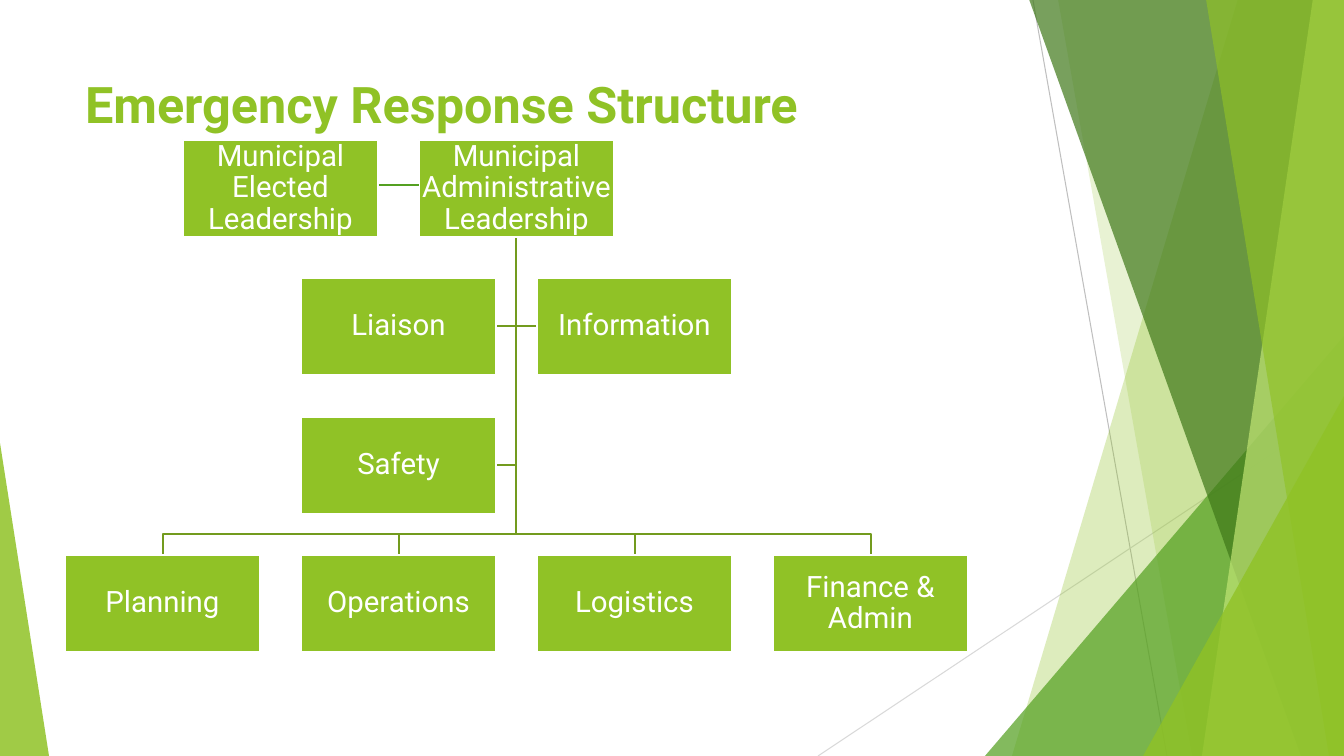
from lxml import etree
from pptx import Presentation
from pptx import util as u
from pptx.dml.color import RGBColor
from pptx.enum import shapes, text
from pptx.oxml.ns import qn

LIME = RGBColor(0x90, 0xC2, 0x26)
GREEN = RGBColor(0x54, 0xA0, 0x21)
FOREST = RGBColor(0x3F, 0x78, 0x19)
PALE = RGBColor(0xC0, 0xE4, 0x74)
OLIVE = RGBColor(0x73, 0x9B, 0x1E)
GRAY = RGBColor(0xBF, 0xBF, 0xBF)
SILVER = RGBColor(0xD9, 0xD9, 0xD9)
WHITE = RGBColor(0xFF, 0xFF, 0xFF)

FONT = "Roboto"
WIDTH, HEIGHT = 1344, 756
PX = u.Inches(7.5) / HEIGHT

TITLE = "Emergency Response Structure"
THIN_LINES = [((1033, 0), (1167, 756), GRAY), ((1344, 406), (818, 756), SILVER)]
FACETS = [
    ([(1238, -1), (1344, -1), (1344, 756), (1012, 756)], LIME, 30),
    ([(1058, -1), (1344, -1), (1344, 756), (1192, 756)], LIME, 20),
    ([(1344, 336), (1344, 756), (985, 756)], GREEN, 72),
    ([(1029, -1), (1344, -1), (1344, 756), (1301, 756)], FOREST, 70),
    ([(1313, -1), (1344, -1), (1344, 756), (1202, 756)], PALE, 70),
    ([(1206, -1), (1344, -1), (1344, 756), (1329, 756)], LIME, 65),
    ([(1344, 396), (1344, 756), (1143, 756)], LIME, 80),
    ([(0, 443), (49, 756), (0, 756)], LIME, 85),
]
LEADERS = [("Municipal Elected Leadership", 1, 0), ("Municipal Administrative Leadership", 3, 0)]
SECTIONS = [("Planning", 0, 3), ("Operations", 2, 3), ("Logistics", 4, 3), ("Finance & Admin", 6, 3)]
STAFF = [("Liaison", 2, 1), ("Information", 4, 1), ("Safety", 2, 2)]

CHART_LEFT, CHART_TOP = 65, 140
HALF_COLUMN, ROW_PITCH = 118, 138.5
BOX_WIDTH, BOX_HEIGHT = 195, 97
TRUNK, TRUNK_TOP, BUS = 516, 237, 534


def px(value):
    return u.Emu(round(value * PX))


def corner(column, row):
    return CHART_LEFT + HALF_COLUMN * column, int(CHART_TOP + ROW_PITCH * row)


def add_outline(page, points, close):
    builder = page.shapes.build_freeform(*points[0], scale=PX)
    builder.add_line_segments(points[1:], close=close)
    outline = builder.convert_to_shape()
    outline.shadow.inherit = False
    return outline


def add_facet(page, points, color, opacity):
    facet = add_outline(page, points, True)
    facet.fill.solid()
    facet.fill.fore_color.rgb = color
    facet.line.fill.background()
    swatch = facet.fill._xPr.find(qn("a:solidFill"))[0]
    etree.SubElement(swatch, qn("a:alpha"), val=str(opacity * 1000))


def add_branch(page, points):
    branch = add_outline(page, [(TRUNK, TRUNK_TOP), *points], False)
    branch.fill.background()
    branch.line.color.rgb = OLIVE
    branch.line.width = u.Pt(1.5)


def add_line(page, start, end, color, width):
    line = page.shapes.add_connector(
        shapes.MSO_CONNECTOR.STRAIGHT, *map(px, start), *map(px, end))
    line.line.color.rgb = color
    line.line.width = u.Pt(width)
    etree.SubElement(line._element.spPr, qn("a:effectLst"))


def write(para, words, size, color):
    span = para.add_run()
    span.text = words
    span.font.name = FONT
    span.font.size = u.Pt(size)
    span.font.color.rgb = color
    return span


def add_box(page, label, column, row):
    left, top = corner(column, row)
    box = page.shapes.add_shape(
        shapes.MSO_SHAPE.RECTANGLE, px(left), px(top), px(BOX_WIDTH), px(BOX_HEIGHT))
    box.shadow.inherit = False
    box.fill.solid()
    box.fill.fore_color.rgb = LIME
    box.line.color.rgb = WHITE
    box.line.width = u.Pt(1.5)
    frame = box.text_frame
    frame.word_wrap = True
    frame.vertical_anchor = text.MSO_ANCHOR.MIDDLE
    frame.margin_left = frame.margin_right = frame.margin_top = frame.margin_bottom = px(1)
    para = frame.paragraphs[0]
    para.alignment = text.PP_ALIGN.CENTER
    para.line_spacing = 0.9
    write(para, label, 21, WHITE)


def add_title(page):
    title = page.shapes.title
    title.left, title.top, title.width, title.height = map(px, (75, 68, 948, 145))
    title.text_frame.vertical_anchor = text.MSO_ANCHOR.TOP
    para = title.text_frame.paragraphs[0]
    para.alignment = text.PP_ALIGN.LEFT
    write(para, TITLE, 36, LIME).font.bold = True


def main():
    deck = Presentation()
    deck.slide_width, deck.slide_height = px(WIDTH), px(HEIGHT)
    page = deck.slides.add_slide(deck.slide_layouts[5])
    for start, end, color in THIN_LINES:
        add_line(page, start, end, color, 0.75)
    for points, color, opacity in FACETS:
        add_facet(page, points, color, opacity)
    add_title(page)

    for _, column, row in STAFF:
        left, top = corner(column, row)
        middle = top + BOX_HEIGHT // 2
        edge = left if left > TRUNK else left + BOX_WIDTH
        add_branch(page, [(TRUNK, middle), (edge, middle)])
    for _, column, row in SECTIONS:
        left, top = corner(column, row)
        center = left + BOX_WIDTH // 2 + 1
        add_branch(page, [(TRUNK, BUS), (center, BUS), (center, top)])
    for label, column, row in LEADERS + SECTIONS + STAFF:
        add_box(page, label, column, row)
    add_line(page, (379, 185), (419, 185), GREEN, 1.75)
    deck.save("out.pptx")


if __name__ == "__main__":
    main()
